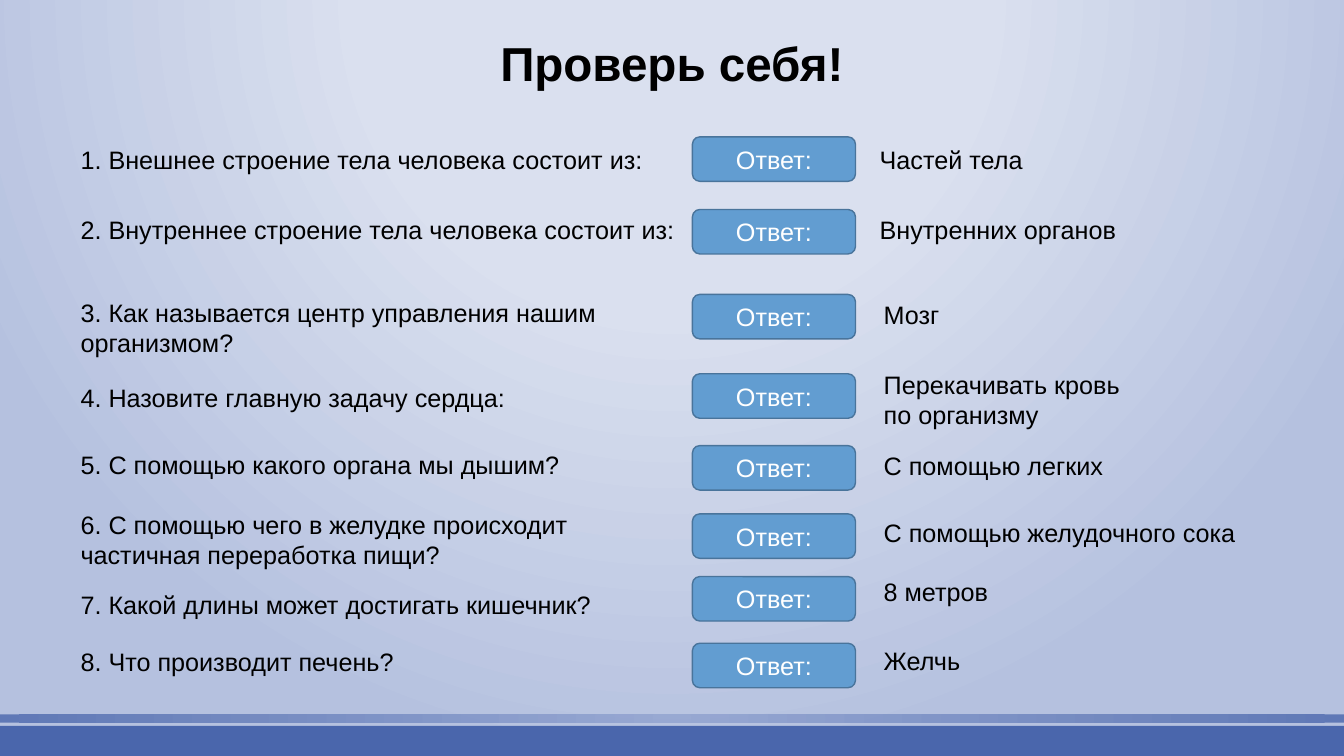
from pptx import Presentation
from pptx.dml.color import RGBColor
from pptx.enum.shapes import MSO_SHAPE as Shape
from pptx.enum.text import MSO_ANCHOR as Anchor, MSO_AUTO_SIZE as AutoSize, PP_ALIGN as Align
from pptx.oxml import parse_xml
from pptx.oxml.ns import nsdecls, qn
from pptx.util import Cm, Pt

# Content: text and top edge (cm) of each question and answer, with the button top between
TITLE = "Проверь себя!"
BUTTON_LABEL = "Ответ:"
ROWS = [
    ("1. Внешнее строение тела человека состоит из:", 3.51, 3.45, "Частей тела", 3.51),
    ("2. Внутреннее строение тела человека состоит из:", 5.28, 5.28, "Внутренних органов", 5.28),
    ("3. Как называется центр управления нашим организмом?", 7.37, 7.42, "Мозг", 7.42),
    ("4. Назовите главную задачу сердца:", 9.5, 9.42, "Перекачивать кровь по организму", 9.17),
    ("5. С помощью какого органа мы дышим?", 11.2, 11.23, "С помощью легких", 11.23),
    ("6. С помощью чего в желудке происходит частичная переработка пищи?", 12.7, 12.95,
     "С помощью желудочного сока", 12.9),
    ("7. Какой длины может достигать кишечник?", 14.73, 14.53, "8 метров", 14.4),
    ("8. Что производит печень?", 16.15, 16.21, "Желчь", 16.13),
]

# Layout (cm)
WIDTH, HEIGHT = 33.87, 19.05
QUESTION_LEFT, QUESTION_WIDTH = 1.78, 15.67
BUTTON_LEFT, BUTTON_WIDTH, BUTTON_HEIGHT = 17.45, 4.11, 1.12
FIRST_ANSWERS, FIRST_ANSWER_LEFT, ANSWER_LEFT = 2, 21.92, 22.02
NARROW_ANSWERS, NARROW_WIDTH, WIDE_WIDTH = 5, 6.76, 10.13
TEXT_HEIGHT = 1.02

FONT = "Arial"
BLACK = RGBColor(0x00, 0x00, 0x00)
WHITE = RGBColor(0xFF, 0xFF, 0xFF)
BUTTON_BLUE = RGBColor(0x62, 0x9D, 0xD1)
BUTTON_EDGE = RGBColor(0x49, 0x74, 0x9B)
BAND_BLUE = RGBColor(0x4A, 0x66, 0xAC)
BAND_LIGHT = RGBColor(0x90, 0xA2, 0xCF)
SKY = RGBColor(0xDA, 0xE0, 0xEF)
SKY_EDGE = RGBColor(0xB5, 0xC1, 0xDF)


def set_radial_fill(properties, stops, top, bottom):
    """Replace a solid fill by a circular gradient of (position, colour, opacity) in percent."""
    stop_xml = "".join(
        f'<a:gs pos="{position * 1000}"><a:srgbClr val="{colour}">'
        f'<a:alpha val="{opacity * 1000}"/></a:srgbClr></a:gs>'
        for position, colour, opacity in stops)
    gradient = parse_xml(
        f'<a:gradFill {nsdecls("a")} rotWithShape="1"><a:gsLst>{stop_xml}</a:gsLst>'
        f'<a:path path="circle"><a:fillToRect l="50000" t="{top * 1000}" r="50000" '
        f'b="{bottom * 1000}"/></a:path></a:gradFill>')
    properties.replace(properties.find(qn("a:solidFill")), gradient)


def format_paragraph(paragraph, size, colour, alignment=Align.LEFT, bold=False):
    paragraph.alignment = alignment
    font = paragraph.font
    font.name, font.size, font.bold = FONT, Pt(size), bold
    font.color.rgb = colour


def add_filled_shape(slide, kind, left, top, width, height, colour):
    shape = slide.shapes.add_shape(kind, Cm(left), Cm(top), Cm(width), Cm(height))
    shape.shadow.inherit = False
    shape.fill.solid()
    shape.fill.fore_color.rgb = colour
    shape.line.fill.background()
    return shape


def add_text(slide, text, left, top, width):
    box = slide.shapes.add_textbox(Cm(left), Cm(top), Cm(width), Cm(TEXT_HEIGHT))
    frame = box.text_frame
    frame.word_wrap = True
    frame.auto_size = AutoSize.SHAPE_TO_FIT_TEXT
    frame.text = text
    format_paragraph(frame.paragraphs[0], 18, BLACK)


def add_button(slide, top):
    button = add_filled_shape(slide, Shape.ROUNDED_RECTANGLE, BUTTON_LEFT, top,
                              BUTTON_WIDTH, BUTTON_HEIGHT, BUTTON_BLUE)
    button.line.color.rgb = BUTTON_EDGE
    button.line.width = Pt(1)
    frame = button.text_frame
    frame.vertical_anchor = Anchor.MIDDLE
    frame.text = BUTTON_LABEL
    format_paragraph(frame.paragraphs[0], 18, WHITE, Align.CENTER)


def main():
    presentation = Presentation()
    presentation.slide_width, presentation.slide_height = Cm(WIDTH), Cm(HEIGHT)
    slide = presentation.slides.add_slide(presentation.slide_layouts[5])

    # Background and bottom bands
    slide.background.fill.solid()
    slide.background.fill.fore_color.rgb = SKY
    background = next(slide.element.iter(qn("p:bgPr")))
    set_radial_fill(background, [(0, SKY, 59), (40, SKY, 66), (100, SKY_EDGE, 100)], -80, 180)
    stripe = add_filled_shape(slide, Shape.RECTANGLE, 0, 18, WIDTH, 0.21, BAND_BLUE)
    set_radial_fill(stripe.element.spPr, [(0, BAND_LIGHT, 80), (100, BAND_BLUE, 80)], 50, 50)
    add_filled_shape(slide, Shape.RECTANGLE, 0, 18.29, WIDTH, HEIGHT - 18.29, BAND_BLUE)

    # Title
    title = slide.shapes.title
    title.left, title.top, title.width, title.height = Cm(0), Cm(0.84), Cm(WIDTH), Cm(1.6)
    frame = title.text_frame
    frame.text = TITLE
    frame.auto_size = AutoSize.NONE
    frame.vertical_anchor = Anchor.BOTTOM
    format_paragraph(frame.paragraphs[0], 34, BLACK, Align.CENTER, bold=True)
    frame.paragraphs[0].line_spacing = 0.9

    # Questions, buttons and answers
    for index, (question, question_top, button_top, answer, answer_top) in enumerate(ROWS):
        add_text(slide, question, QUESTION_LEFT, question_top, QUESTION_WIDTH)
        add_button(slide, button_top)
        left = FIRST_ANSWER_LEFT if index < FIRST_ANSWERS else ANSWER_LEFT
        width = NARROW_WIDTH if index < NARROW_ANSWERS else WIDE_WIDTH
        add_text(slide, answer, left, answer_top, width)

    presentation.save("out.pptx")


if __name__ == "__main__":
    main()
